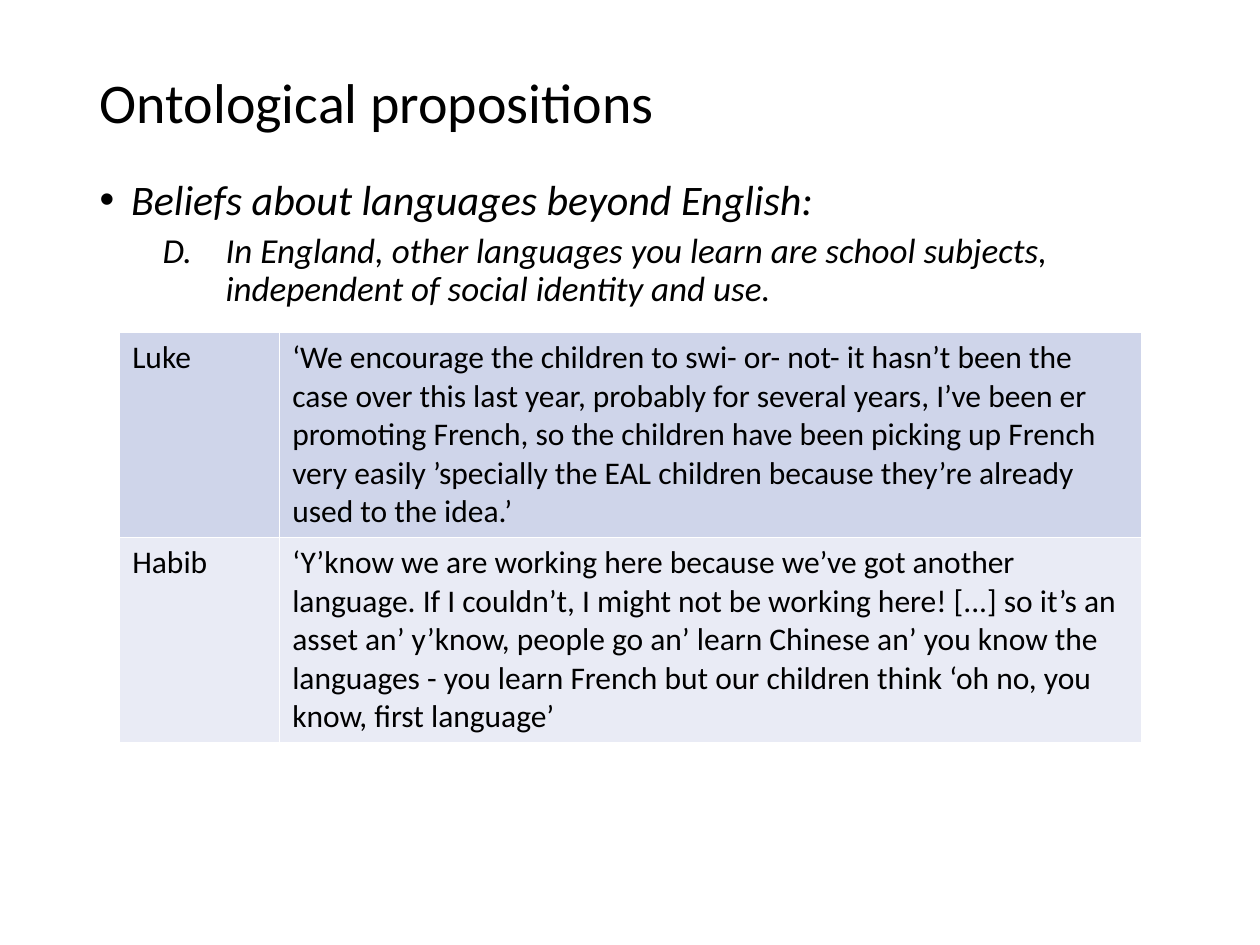
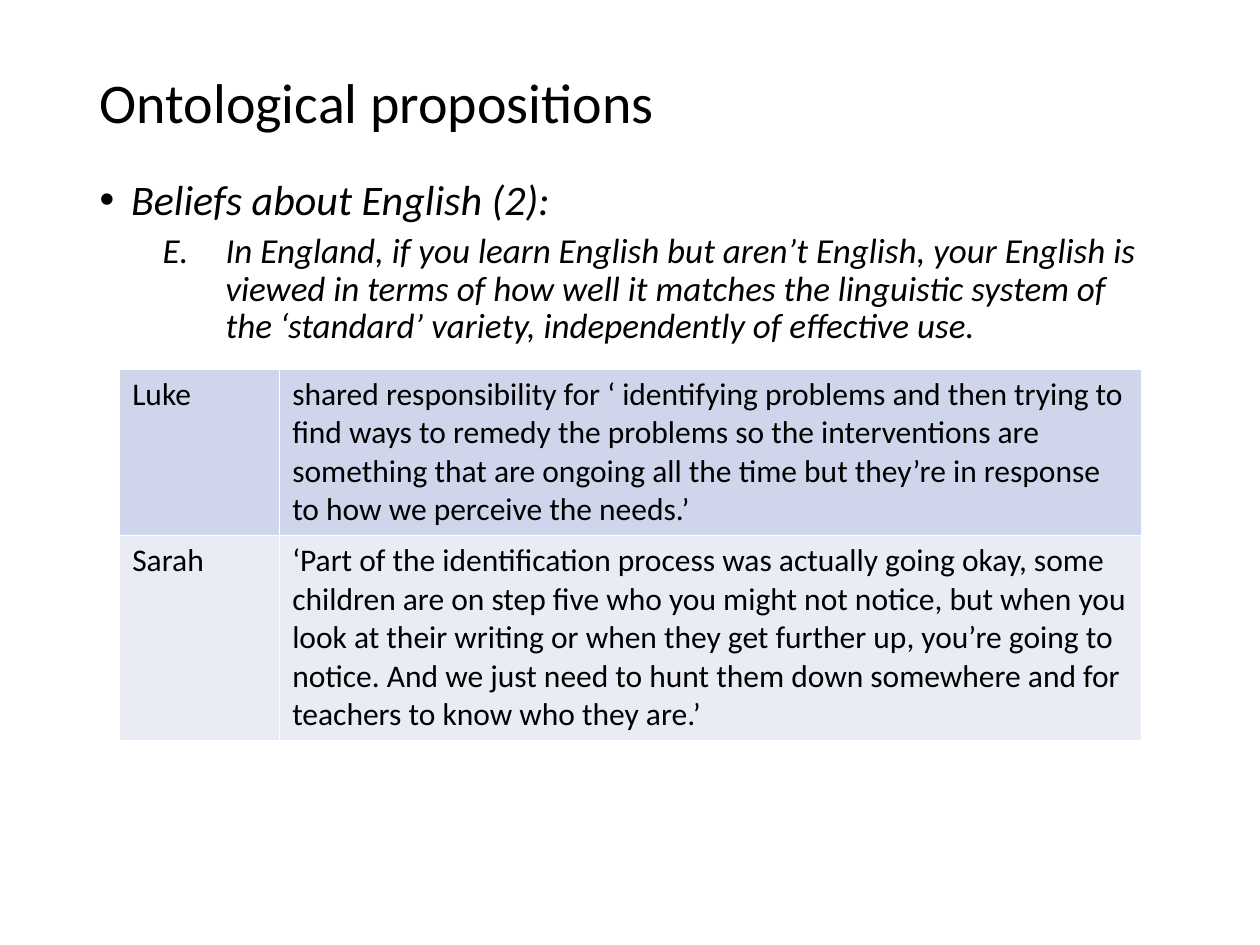
from dataclasses import dataclass

import lxml.etree
import pptx
import pptx.dml.color
import pptx.enum.text
import pptx.oxml.ns
import pptx.util


@dataclass(frozen=True)
class Theme:
    font: str = "Calibri"
    ink: str = "000000"
    paper: str = "FFFFFF"
    bands: tuple = ("CFD5EA", "E9EBF5")
    title_size: int = 32
    topic_size: int = 24
    proposition_size: int = 20
    quote_size: int = 18
    line_spacing: float = 0.9
    border: int = 1


THEME = Theme()
WIDTH = pptx.util.Inches(10)
HEIGHT = pptx.util.Inches(7.5)
TITLE_AREA = (6.9, 5.33, 86.2, 11.6)
BODY_AREA = (6.9, 18.27, 86.2, 64.67)
TABLE_LEFT = 9.5
COLUMN_WIDTHS = (12.7, 68.4)
LINE_HEIGHT = 4
CELL_PADDING = 1.33


def across(percent):
    return round(WIDTH * percent / 100)


def down(percent):
    return round(HEIGHT * percent / 100)


def place(shape, area):
    left, top, width, height = area
    shape.left, shape.top = across(left), down(top)
    shape.width, shape.height = across(width), down(height)


def add_element(parent, tag, **attributes):
    name = pptx.oxml.ns.qn(tag)
    return lxml.etree.SubElement(parent, name, attributes)


def format_runs(para, size, italic=False):
    for span in para.runs:
        span.font.name = THEME.font
        span.font.size = pptx.util.Pt(size)
        span.font.italic = italic
        span.font.color.rgb = pptx.dml.color.RGBColor.from_string(THEME.ink)


def set_indent(para, left, hanging):
    properties = para._p.get_or_add_pPr()
    properties.set("marL", str(pptx.util.Inches(left)))
    properties.set("indent", str(-pptx.util.Inches(hanging)))
    return properties


def add_title(page, text):
    title = page.shapes.title
    place(title, TITLE_AREA)
    frame = title.text_frame
    frame.text = text
    frame.auto_size = pptx.enum.text.MSO_AUTO_SIZE.NONE
    frame.vertical_anchor = pptx.enum.text.MSO_ANCHOR.MIDDLE
    para = frame.paragraphs[0]
    para.alignment = pptx.enum.text.PP_ALIGN.LEFT
    para.line_spacing = THEME.line_spacing
    format_runs(para, THEME.title_size)


def add_beliefs(page, topic_text, proposition_text, letter):
    body = page.placeholders[1]
    place(body, BODY_AREA)
    frame = body.text_frame
    frame.auto_size = pptx.enum.text.MSO_AUTO_SIZE.NONE

    topic = frame.paragraphs[0]
    topic.text = topic_text
    properties = set_indent(topic, 0.25, 0.25)
    add_element(properties, "a:buFont", typeface="Arial")
    add_element(properties, "a:buChar", char="•")
    topic.space_before = pptx.util.Pt(0)

    proposition = frame.add_paragraph()
    proposition.text = proposition_text
    proposition.level = 1
    properties = set_indent(proposition, 1, 0.5)
    add_element(properties, "a:buFont", typeface=THEME.font)
    start = str(ord(letter) - ord("A") + 1)
    add_element(properties, "a:buAutoNum", type="alphaUcPeriod", startAt=start)
    proposition.space_before = pptx.util.Pt(5)

    sizes = (THEME.topic_size, THEME.proposition_size)
    for para, size in zip(frame.paragraphs, sizes):
        para.line_spacing = THEME.line_spacing
        format_runs(para, size, italic=True)


def add_borders(cell):
    properties = cell._tc.get_or_add_tcPr()
    width = str(pptx.util.Pt(THEME.border))
    for side in ("a:lnL", "a:lnR", "a:lnT", "a:lnB"):
        line = add_element(properties, side, w=width)
        fill = add_element(line, "a:solidFill")
        add_element(fill, "a:srgbClr", val=THEME.paper)


def fill_cell(cell, text, color):
    cell.text = text
    add_borders(cell)
    cell.fill.solid()
    cell.fill.fore_color.rgb = pptx.dml.color.RGBColor.from_string(color)
    format_runs(cell.text_frame.paragraphs[0], THEME.quote_size)


def add_quotes(page, top, quotes):
    heights = [lines * LINE_HEIGHT + CELL_PADDING for _, _, lines in quotes]
    table = page.shapes.add_table(
        len(quotes), len(COLUMN_WIDTHS), across(TABLE_LEFT), down(top),
        across(sum(COLUMN_WIDTHS)), down(sum(heights))).table
    table.first_row = False
    for column, width in zip(table.columns, COLUMN_WIDTHS):
        column.width = across(width)
    for index, (speaker, quote, _) in enumerate(quotes):
        table.rows[index].height = down(heights[index])
        color = THEME.bands[index % len(THEME.bands)]
        for column, text in enumerate((speaker, quote)):
            fill_cell(table.cell(index, column), text, color)


def add_page(deck, topic, letter, proposition, table_top, quotes):
    page = deck.slides.add_slide(deck.slide_layouts[1])
    add_title(page, "Ontological propositions")
    add_beliefs(page, topic, proposition, letter)
    add_quotes(page, table_top, quotes)


def main():
    deck = pptx.Presentation()
    deck.slide_width, deck.slide_height = WIDTH, HEIGHT
    add_page(
        deck, "Beliefs about languages beyond English:", "D",
        "In England, other languages you learn are school subjects, "
        "independent of social identity and use.",
        35.2,
        [("Luke",
          "‘We encourage the children to swi- or- not- it hasn’t been the "
          "case over this last year, probably for several years, I’ve been er "
          "promoting French, so the children have been picking up French "
          "very easily ’specially the EAL children because they’re already "
          "used to the idea.’", 5),
         ("Habib",
          "‘Y’know we are working here because we’ve got another "
          "language. If I couldn’t, I might not be working here! [...] so it’s "
          "an asset an’ y’know, people go an’ learn Chinese an’ you know the "
          "languages - you learn French but our children think ‘oh no, you "
          "know, first language’", 5)])
    add_page(
        deck, "Beliefs about English (2):", "E",
        "In England, if you learn English but aren’t English, your English is "
        "viewed in terms of how well it matches the linguistic system of the "
        "‘standard’ variety, independently of effective use.",
        39.07,
        [("Luke",
          "shared responsibility for ‘ identifying problems and then trying to "
          "find ways to remedy the problems so the interventions are "
          "something that are ongoing all the time but they’re in response "
          "to how we perceive the needs.’", 4),
         ("Sarah",
          "‘Part of the identification process was actually going okay, some "
          "children are on step five who you might not notice, but when you "
          "look at their writing or when they get further up, you’re going to "
          "notice. And we just need to hunt them down somewhere and for "
          "teachers to know who they are.’", 5)])
    deck.save("out.pptx")


if __name__ == "__main__":
    main()
